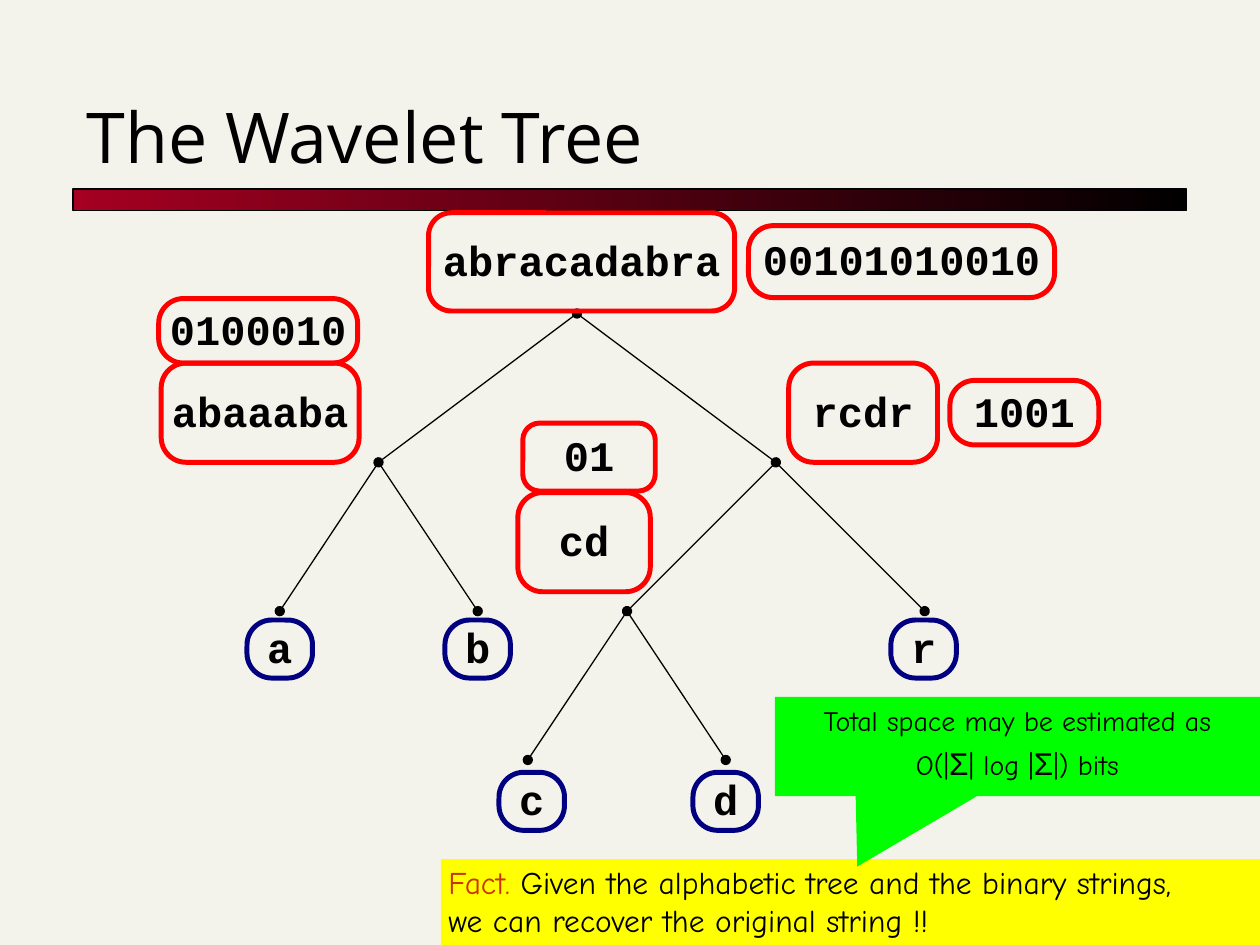
from dataclasses import dataclass

from lxml import etree
from pptx import Presentation
from pptx import util as u
from pptx.dml import color
from pptx.enum import shapes, text
from pptx.oxml import ns


@dataclass(frozen=True)
class Theme:
    paper: str = "F4F3EB"
    ink: str = "000000"
    wine: str = "A50021"
    red: str = "FF0000"
    navy: str = "000080"
    green: str = "00FF00"
    yellow: str = "FFFF00"
    rust: str = "CC3300"
    head: str = "Open Sans"
    code: str = "Courier New"
    hand: str = "Comic Neue"
    greek: str = "Arial"
    big: float = 40
    mid: float = 24
    body: float = 18
    small: float = 16
    thin: float = 0.75
    thick: float = 2.83


@dataclass(frozen=True)
class Box:
    """A rounded label; lengths in centimetres."""
    label: str
    left: float
    top: float
    width: float
    height: float
    line: str
    curve: float = 0.5


T = Theme()
KIND = shapes.MSO_SHAPE
ALIGN = text.PP_ALIGN
ANCHOR = text.MSO_ANCHOR

# Tree nodes: x in centimetres and level
TOP, STEP = 6.32, 3
NODES = {
    "root": (11.63, 0), "left": (7.63, 1), "right": (15.64, 1),
    "a": (5.64, 2), "b": (9.63, 2), "cd": (12.64, 2), "r": (18.64, 2),
    "c": (10.64, 3), "d": (14.63, 3),
}
EDGES = [
    ("root", "right"), ("root", "left"), ("right", "r"), ("right", "cd"),
    ("cd", "d"), ("cd", "c"), ("left", "b"), ("left", "a"),
]
LEAVES = [
    Box(name, left, top, 1.32, 1.17, T.navy)
    for name, left, top in [
        ("a", 4.98, 12.5), ("b", 8.97, 12.5), ("c", 10.06, 15.57),
        ("d", 13.97, 15.57), ("r", 17.96, 12.5),
    ]
]
LABELS = [
    Box("abracadabra", 8.64, 4.29, 6.17, 1.98, T.red, 0.46),
    Box("abaaaba", 3.25, 7.32, 3.99, 2, T.red),
    Box("rcdr", 15.9, 7.32, 3, 2, T.red),
    Box("cd", 10.44, 9.93, 2.67, 2, T.red),
    Box("01", 10.54, 8.53, 2.67, 1.37, T.red, 0.34),
    Box("00101010010", 15.09, 4.55, 6.17, 1.45, T.red),
    Box("0100010", 3.2, 6.02, 4.01, 1.3, T.red),
    Box("1001", 19.15, 7.67, 3, 1.3, T.red),
]


def rgb(code: str) -> color.RGBColor:
    return color.RGBColor.from_string(code)


def style(run, face: str, size: float, tint: str = T.ink, bold: bool = False) -> None:
    run.font.name, run.font.size, run.font.bold = face, u.Pt(size), bold
    run.font.color.rgb = rgb(tint)


def add_run(para, words: str, face: str, size: float, tint: str = T.ink) -> None:
    run = para.add_run()
    run.text = words
    style(run, face, size, tint)


def add_shape(slide, kind, left: float, top: float, width: float, height: float,
              fill: str = "", line: str = "", weight: float = 0):
    shape = slide.shapes.add_shape(kind, *map(u.Cm, (left, top, width, height)))
    shape.shadow.inherit = False
    if fill:
        shape.fill.solid()
        shape.fill.fore_color.rgb = rgb(fill)
    else:
        shape.fill.background()
    if line:
        shape.line.color.rgb = rgb(line)
        shape.line.width = u.Pt(weight)
    else:
        shape.line.fill.background()
    return shape


def add_text(slide, left: float, top: float, width: float, height: float):
    frame = slide.shapes.add_textbox(*map(u.Cm, (left, top, width, height))).text_frame
    frame.word_wrap = True
    return frame


def add_box(slide, box: Box) -> None:
    shape = add_shape(slide, KIND.ROUNDED_RECTANGLE, box.left, box.top,
                      box.width, box.height, line=box.line, weight=T.thick)
    shape.adjustments[0] = box.curve / box.height
    frame = shape.text_frame
    frame.margin_left = frame.margin_right = u.Cm(0.05)
    frame.margin_top = frame.margin_bottom = u.Cm(0.05)
    frame.vertical_anchor = ANCHOR.MIDDLE
    frame.word_wrap = False
    frame.text = box.label
    para = frame.paragraphs[0]
    para.alignment, para.line_spacing = ALIGN.CENTER, 0.95
    style(para.runs[0], T.code, T.mid, bold=True)


def add_edge(slide, start: str, end: str, ends: list[str]) -> None:
    spots = [u.Cm(v) for x, level in (NODES[start], NODES[end])
             for v in (x, TOP + STEP * level)]
    edge = slide.shapes.add_connector(shapes.MSO_CONNECTOR.STRAIGHT, *spots)
    edge.line.color.rgb = rgb(T.ink)
    edge.line.width = u.Pt(T.thin)
    for tag in ends:
        etree.SubElement(edge.line._get_or_add_ln(), ns.qn(tag), type="oval")
    etree.SubElement(edge._element.spPr, ns.qn("a:effectLst"))


def add_title(slide) -> None:
    bar = add_shape(slide, KIND.RECTANGLE, 1.47, 3.81, 22.45, 0.43,
                    line=T.ink, weight=T.thin)
    bar.fill.gradient()
    bar.fill.gradient_angle = 0
    for stop, tint, place in zip(bar.fill.gradient_stops, (T.wine, T.ink), (0, 1)):
        stop.color.rgb, stop.position = rgb(tint), place
    frame = add_text(slide, 1.5, 1.7, 21.59, 2.01)
    frame.vertical_anchor = ANCHOR.BOTTOM
    frame.text = "The Wavelet Tree"
    style(frame.paragraphs[0].runs[0], T.head, T.big)


def add_fact(slide) -> None:
    add_shape(slide, KIND.RECTANGLE, 8.89, 17.32, 16.51, 1.73, fill=T.yellow)
    frame = add_text(slide, 8.79, 17.27, 16.61, 1.78)
    first, last = frame.paragraphs[0], frame.add_paragraph()
    add_run(first, "Fact.", T.hand, T.body, T.rust)
    add_run(first, " Given the alphabetic tree and the binary strings,", T.hand, T.body)
    add_run(last, "we can recover the original string !!", T.hand, T.body)


def add_callout(slide) -> None:
    note = add_shape(slide, KIND.RECTANGULAR_CALLOUT, 15.62, 14.05, 9.78, 2, fill=T.green)
    note.adjustments[0], note.adjustments[1] = -0.33, 1.21
    frame = note.text_frame
    frame.vertical_anchor = ANCHOR.TOP
    first, last = frame.paragraphs[0], frame.add_paragraph()
    first.alignment = last.alignment = ALIGN.CENTER
    last.line_spacing = 1.2
    add_run(first, "Total space may be estimated as", T.hand, T.small)
    for part in ("O(|", "Σ", "| log |", "Σ", "|) bits"):
        face, size = (T.greek, T.body) if part == "Σ" else (T.hand, T.small)
        add_run(last, part, face, size)


def main() -> None:
    deck = Presentation()
    deck.slide_width, deck.slide_height = u.Cm(25.4), u.Cm(19.05)
    slide = deck.slides.add_slide(deck.slide_layouts[6])
    slide.background.fill.solid()
    slide.background.fill.fore_color.rgb = rgb(T.paper)

    add_title(slide)
    # Tree: the edge to the left child also carries the root's dot
    for start, end in EDGES:
        both = (start, end) == ("root", "left")
        add_edge(slide, start, end, ["a:headEnd", "a:tailEnd"] if both else ["a:tailEnd"])
    for box in LEAVES + LABELS:
        add_box(slide, box)
    # Remarks
    add_fact(slide)
    add_callout(slide)
    deck.save("out.pptx")


if __name__ == "__main__":
    main()
